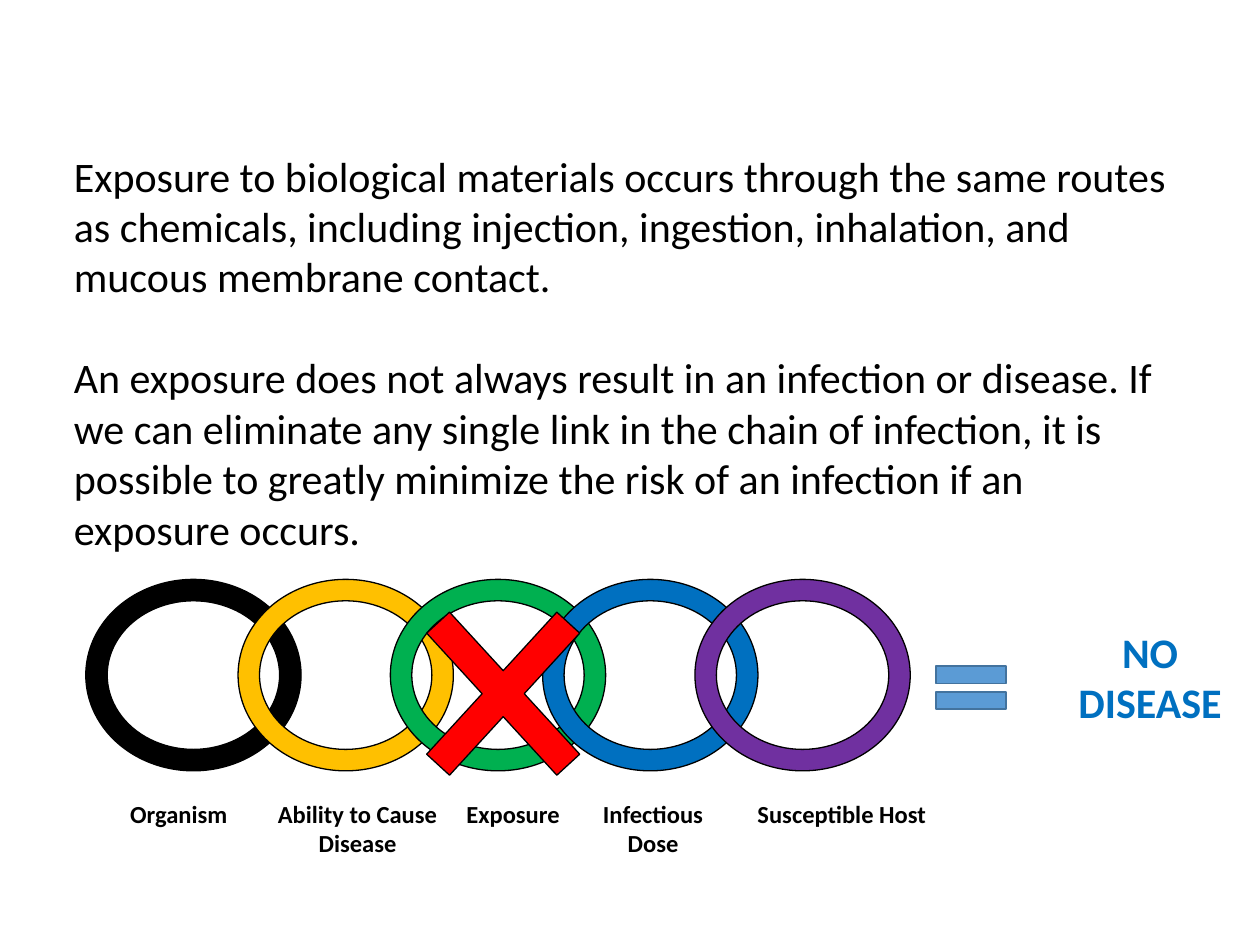
import pptx
import pptx.dml.color
import pptx.enum.shapes
import pptx.enum.text
import pptx.util

Cm = pptx.util.Cm
Pt = pptx.util.Pt
RGB = pptx.dml.color.RGBColor.from_string
SHAPE = pptx.enum.shapes.MSO_SHAPE
ALIGN = pptx.enum.text.PP_ALIGN

BODY = [
    "Exposure to biological materials occurs through the same routes as chemicals, "
    "including injection, ingestion, inhalation, and mucous membrane contact.",
    "An exposure does not always result in an infection or disease. If we can eliminate "
    "any single link in the chain of infection, it is possible to greatly minimize the "
    "risk of an infection if an exposure occurs.",
]
RING_COLORS = ["000000", "FFC000", "00B050", "0070C0", "7030A0"]
LABELS = [
    (["Organism"], 2.36, 2.49),
    (["Ability to Cause", "Disease"], 5.33, 3.76),
    (["Exposure"], 9.14, 2.41),
    (["Infectious", "Dose"], 11.83, 2.67),
    (["Susceptible Host"], 14.43, 5.08),
]
VERDICT = ["NO", "DISEASE"]

THEME = {
    "font": "Calibri", "text": "000000", "outline": "000000", "verdict": "0070C0",
    "cross": "FF0000", "equal": "5B9BD5", "equal_line": "43739E",
    "body_size": 24, "label_size": 14, "paragraph_gap": 29,
}

RING_LEFT, RING_TOP, RING_PITCH = 1.73, 11.68, 3.07
RING_WIDTH, RING_HEIGHT = 4.34, 3.86
LABEL_TOP, LABEL_LINE = 15.98, 1.1


def add_text(shapes, box, lines, size, color="text", bold=False,
             align=ALIGN.CENTER, wrap=True, gap=0):
    s = shapes.add_textbox(*map(Cm, box))
    tf = s.text_frame
    tf.word_wrap = wrap
    for i, line in enumerate(lines):
        p = tf.add_paragraph() if i else tf.paragraphs[0]
        p.alignment = align
        p.space_before = Pt(gap if i else 0)
        r = p.add_run()
        r.text = line
        r.font.name = THEME["font"]
        r.font.size = Pt(THEME[size])
        r.font.bold = bold
        r.font.color.rgb = RGB(THEME[color])


def add_figure(shapes, kind, box, fill, line, weight=0.75, adjust=None):
    s = shapes.add_shape(kind, *map(Cm, box))
    s.shadow.inherit = False
    s.fill.solid()
    s.fill.fore_color.rgb = RGB(fill)
    s.line.color.rgb = RGB(line)
    s.line.width = Pt(weight)
    if adjust is not None:
        s.adjustments[0] = adjust


def main():
    prs = pptx.Presentation()
    prs.slide_width, prs.slide_height = Cm(25.4), Cm(19.05)
    shapes = prs.slides.add_slide(prs.slide_layouts[6]).shapes

    add_text(shapes, (1.24, 2.9, 22.78, 9.07), BODY, "body_size",
             align=ALIGN.LEFT, gap=THEME["paragraph_gap"])

    chain = shapes.add_group_shape().shapes
    for i, color in enumerate(RING_COLORS):
        box = (RING_LEFT + i * RING_PITCH, RING_TOP, RING_WIDTH, RING_HEIGHT)
        add_figure(chain, SHAPE.DONUT, box, color, THEME["outline"], adjust=0.112)
    for lines, left, width in LABELS:
        box = (left, LABEL_TOP, width, 0.48 + LABEL_LINE * len(lines))
        add_text(chain, box, lines, "label_size", bold=True, wrap=False)

    add_figure(shapes, SHAPE.MATH_MULTIPLY, (7.62, 11.23, 5.05, 5.51),
               THEME["cross"], THEME["outline"], adjust=0.124)
    add_figure(shapes, SHAPE.MATH_EQUAL, (18.62, 13.13, 1.91, 1.47),
               THEME["equal"], THEME["equal_line"], weight=1)
    add_text(shapes, (20.96, 12.5, 4.45, 2.31), VERDICT, "body_size",
             color="verdict", bold=True)

    prs.save("out.pptx")


if __name__ == "__main__":
    main()
